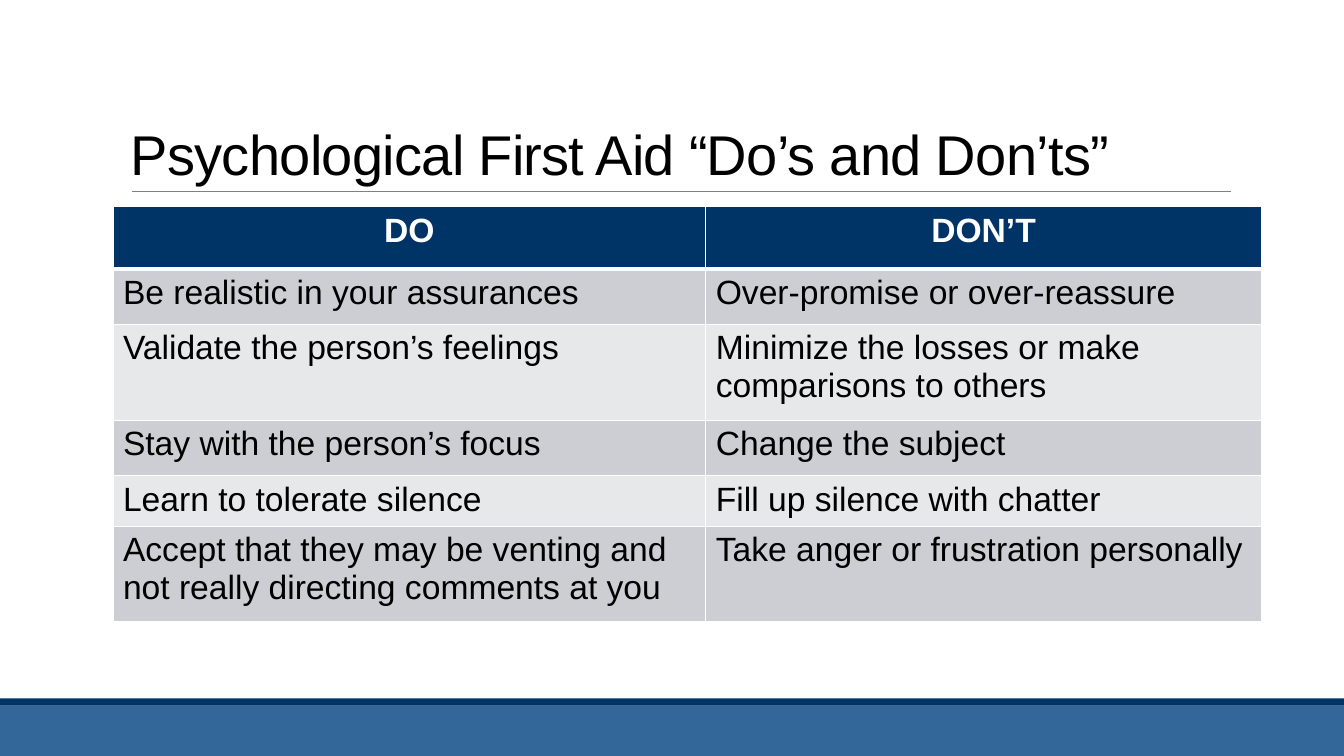
from dataclasses import dataclass

from lxml import etree
from pptx import Presentation
from pptx.dml.color import RGBColor
from pptx.enum.shapes import MSO_CONNECTOR, MSO_SHAPE
from pptx.enum.text import MSO_ANCHOR, PP_ALIGN
from pptx.oxml.ns import qn
from pptx.util import Inches, Pt

RECT = MSO_SHAPE.RECTANGLE
STRAIGHT = MSO_CONNECTOR.STRAIGHT
BOTTOM = MSO_ANCHOR.BOTTOM
LEFT, CENTER = PP_ALIGN.LEFT, PP_ALIGN.CENTER


@dataclass(frozen=True)
class Theme:
    """Colours, font and type sizes of the slide."""
    font: str = "Arial"
    navy: str = "003366"
    blue: str = "336699"
    rule: str = "808080"
    ink: str = "000000"
    white: str = "FFFFFF"
    bands: tuple = ("CCCED3", "E7E8EA")
    title_size: int = 40
    table_size: int = 24


T = Theme()
WIDTH, HEIGHT = 13.33, 7.5
COLUMNS = (5.88, 5.51)
ROWS = (
    (0.62, "DO", "DON’T"),
    (0.55, "Be realistic in your assurances", "Over-promise or over-reassure"),
    (0.95, "Validate the person’s feelings",
     "Minimize the losses or make comparisons to others"),
    (0.55, "Stay with the person’s focus", "Change the subject"),
    (0.47, "Learn to tolerate silence", "Fill up silence with chatter"),
    (0.95, "Accept that they may be venting and not really directing comments at you",
     "Take anger or frustration personally"),
)


def write(tf, text, size, color=T.ink, bold=False, align=LEFT, line=None, spacing=None):
    """Put one formatted paragraph into a text frame."""
    p = tf.paragraphs[0]
    p.alignment = align
    if line:
        p.line_spacing = line
    r = p.add_run()
    r.text = text
    r.font.name, r.font.size, r.font.bold = T.font, Pt(size), bold
    r.font.color.rgb = RGBColor.from_string(color)
    if spacing:
        r._r.get_or_add_rPr().set("spc", str(round(spacing * 100)))


def set_border(cell, side, width):
    """Draw one white border of a table cell."""
    ln = etree.SubElement(cell._tc.get_or_add_tcPr(), qn(f"a:ln{side}"), w=str(Pt(width)))
    fill = etree.SubElement(ln, qn("a:solidFill"))
    etree.SubElement(fill, qn("a:srgbClr"), val=T.white)


def add_title(s, text, x, y, w, h):
    """Place the title at the foot of its box with a rule beneath it."""
    tf = s.shapes.add_textbox(Inches(x), Inches(y), Inches(w), Inches(h)).text_frame
    tf.word_wrap, tf.vertical_anchor = True, BOTTOM
    write(tf, text, T.title_size, line=0.85, spacing=-0.5)
    base = Inches(y + h)
    rule = s.shapes.add_connector(STRAIGHT, Inches(x + 0.11), base, Inches(x + w + 0.01), base)
    rule.line.color.rgb = RGBColor.from_string(T.rule)
    rule.line.width = Pt(0.5)
    etree.SubElement(rule._element.spPr, qn("a:effectLst"))


def add_advice_table(s, x, y):
    """Place the two-column table with a header and banded rows."""
    heights = [row[0] for row in ROWS]
    table = s.shapes.add_table(len(ROWS), len(COLUMNS), Inches(x), Inches(y),
                               Inches(sum(COLUMNS)), Inches(sum(heights))).table
    for column, width in zip(table.columns, COLUMNS):
        column.width = Inches(width)
    for i, (height, *texts) in enumerate(ROWS):
        table.rows[i].height = Inches(height)
        header = i == 0
        widths = {"L": 1, "R": 1, "T": 3 if i == 1 else 1, "B": 3 if header else 1}
        for j, text in enumerate(texts):
            cell = table.cell(i, j)
            for side, width in widths.items():
                set_border(cell, side, width)
            cell.fill.solid()
            cell.fill.fore_color.rgb = RGBColor.from_string(
                T.navy if header else T.bands[(i - 1) % 2])
            write(cell.text_frame, text, T.table_size, bold=header,
                  color=T.white if header else T.ink, align=CENTER if header else LEFT)


def add_footer(s, y, h, stripe):
    """Place the footer band with a dark stripe along its top."""
    for top, height, color in ((y + stripe, h - stripe, T.blue), (y, stripe, T.navy)):
        sp = s.shapes.add_shape(RECT, 0, Inches(top), Inches(WIDTH), Inches(height))
        sp.shadow.inherit = False
        sp.fill.solid()
        sp.fill.fore_color.rgb = RGBColor.from_string(color)
        sp.line.fill.background()


def main():
    """Build and save the slide."""
    prs = Presentation()
    prs.slide_width, prs.slide_height = Inches(WIDTH), Inches(HEIGHT)
    s = prs.slides.add_slide(prs.slide_layouts[6])
    add_footer(s, 6.93, HEIGHT - 6.93, 0.07)
    add_title(s, "Psychological First Aid “Do’s and Don’ts”", 1.2, 0.31, 11, 1.59)
    add_advice_table(s, 1.12, 2.05)
    prs.save("out.pptx")


if __name__ == "__main__":
    main()
